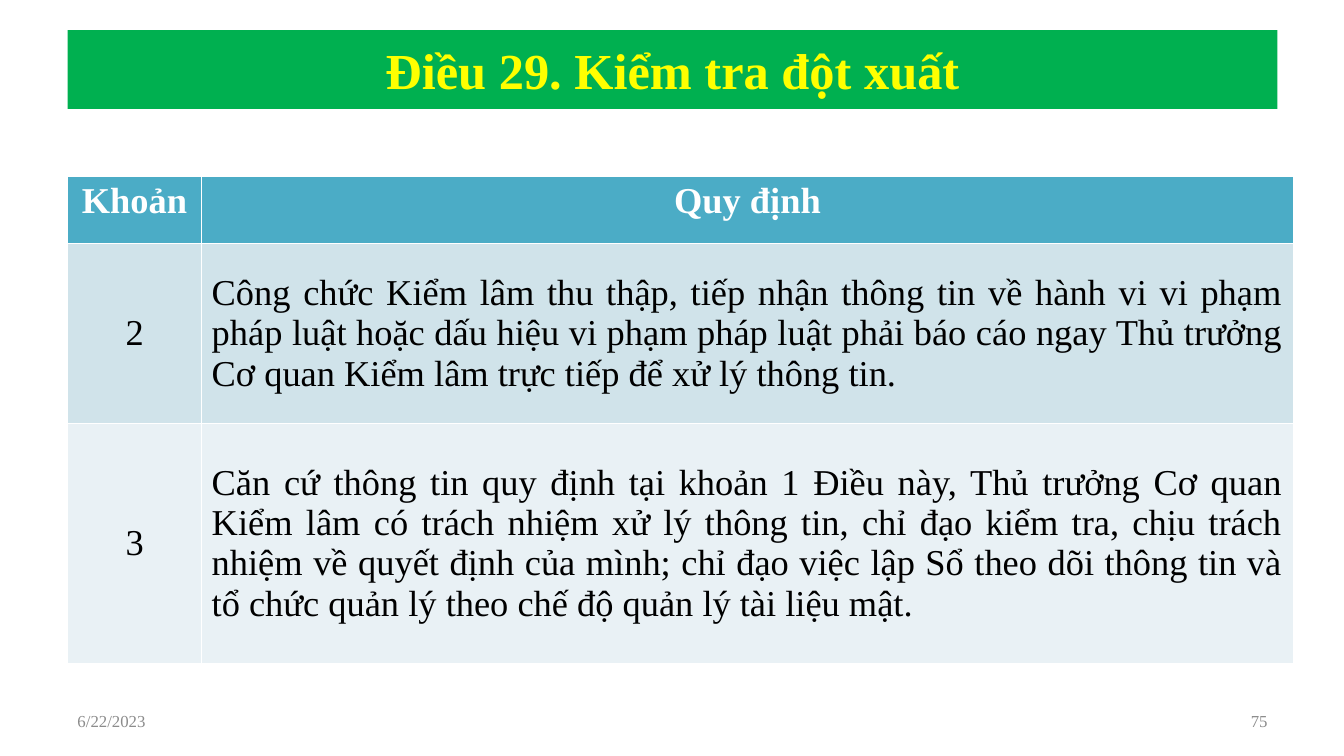
import pptx
import pptx.util
import pptx.dml.color
import pptx.enum.text

Inches = pptx.util.Inches
ALIGN = pptx.enum.text.PP_ALIGN
ANCHOR = pptx.enum.text.MSO_ANCHOR

THEME = {
    "font": "Times New Roman",
    "title_size": 36, "table_size": 26, "footer_size": 12,
    "title_fill": "00B050", "title_text": "FFFF00",
    "header_text": "FFFFFF", "body_text": "000000", "footer_text": "8C8C8C",
    "row_fills": ["4BACC6", "D0E3EA", "E9F1F5"],
}


def rgb(value):
    return pptx.dml.color.RGBColor.from_string(value)


def write(tf, text, size, color, align, anchor=ANCHOR.MIDDLE, bold=False):
    tf.text = text
    tf.vertical_anchor = anchor
    p = tf.paragraphs[0]
    p.alignment = align
    font = p.runs[0].font
    font.name = THEME["font"]
    font.size = pptx.util.Pt(size)
    font.bold = bold
    font.color.rgb = rgb(color)


prs = pptx.Presentation()
prs.slide_width = Inches(13.33)
prs.slide_height = Inches(7.5)
s = prs.slides.add_slide(prs.slide_layouts[5])

for left, text, align in [(0.67, "6/22/2023", ALIGN.LEFT), (9.56, "75", ALIGN.RIGHT)]:
    sp = s.shapes.add_textbox(Inches(left), Inches(6.95), Inches(3.11), Inches(0.4))
    sp.text_frame.word_wrap = True
    write(sp.text_frame, text, THEME["footer_size"], THEME["footer_text"], align)

title = s.shapes.title
title.left, title.top = Inches(0.67), Inches(0.3)
title.width, title.height = Inches(12), Inches(0.78)
title.fill.solid()
title.fill.fore_color.rgb = rgb(THEME["title_fill"])
title.text_frame.auto_size = pptx.enum.text.MSO_AUTO_SIZE.NONE
write(title.text_frame, "Điều 29. Kiểm tra đột xuất", THEME["title_size"],
      THEME["title_text"], ALIGN.CENTER, bold=True)

rows = [
    ("Khoản", "Quy định"),
    ("2", "Công chức Kiểm lâm thu thập, tiếp nhận thông tin về hành vi vi phạm "
          "pháp luật hoặc dấu hiệu vi phạm pháp luật phải báo cáo ngay Thủ trưởng "
          "Cơ quan Kiểm lâm trực tiếp để xử lý thông tin."),
    ("3", "Căn cứ thông tin quy định tại khoản 1 Điều này, Thủ trưởng Cơ quan "
          "Kiểm lâm có trách nhiệm xử lý thông tin, chỉ đạo kiểm tra, chịu trách "
          "nhiệm về quyết định của mình; chỉ đạo việc lập Sổ theo dõi thông tin và "
          "tổ chức quản lý theo chế độ quản lý tài liệu mật."),
]
table = s.shapes.add_table(3, 2, Inches(0.67), Inches(1.75), Inches(12.17), Inches(4.83)).table
for column, width in zip(table.columns, [1.33, 10.83]):
    column.width = Inches(width)
for row, height in zip(table.rows, [0.67, 1.78, 2.38]):
    row.height = Inches(height)

for i, texts in enumerate(rows):
    header = i == 0
    for j, text in enumerate(texts):
        cell = table.cell(i, j)
        cell.fill.solid()
        cell.fill.fore_color.rgb = rgb(THEME["row_fills"][i])
        anchor = ANCHOR.TOP if header else ANCHOR.MIDDLE
        cell.vertical_anchor = anchor
        write(cell.text_frame, text, THEME["table_size"],
              THEME["header_text" if header else "body_text"],
              ALIGN.CENTER if header or j == 0 else ALIGN.JUSTIFY, anchor, header)

prs.save("out.pptx")
